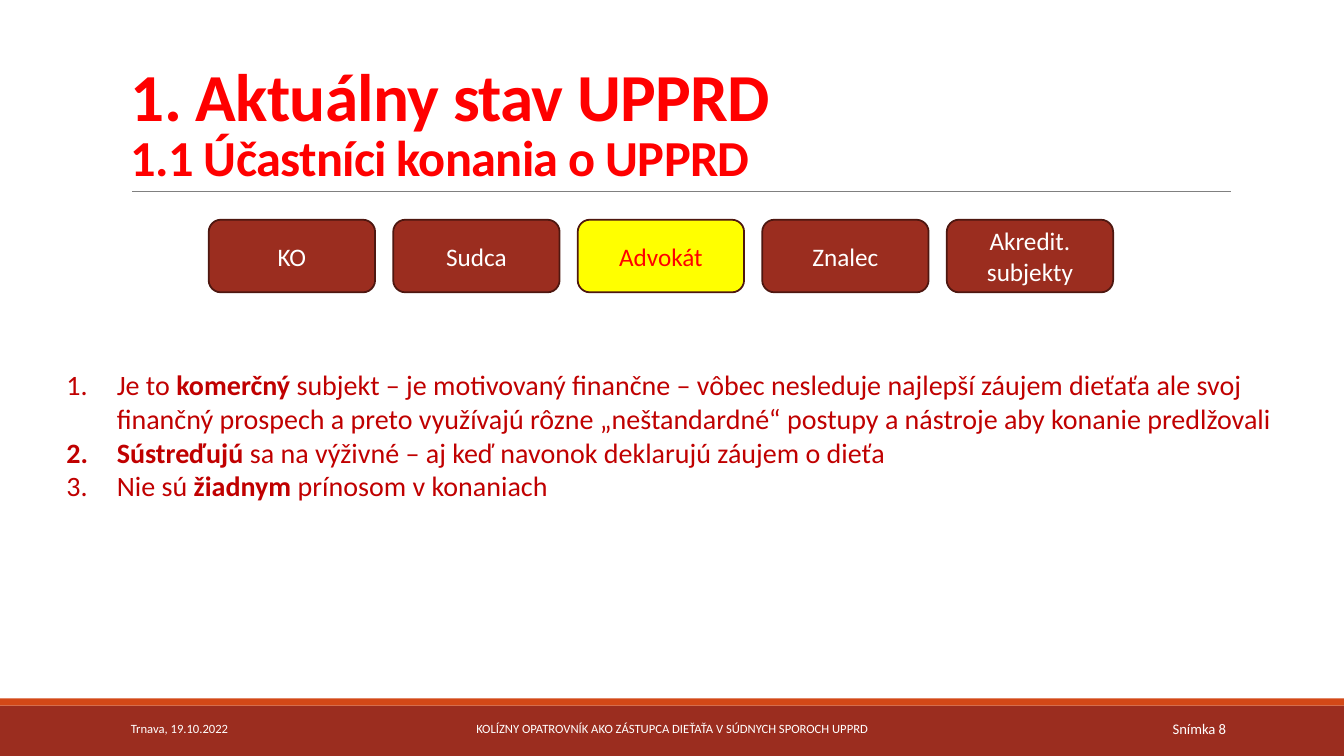
from lxml import etree
from pptx import Presentation
from pptx.dml.color import RGBColor
from pptx.enum.shapes import MSO_CONNECTOR, MSO_SHAPE
from pptx.enum.text import MSO_ANCHOR, PP_ALIGN
from pptx.oxml.ns import qn
from pptx.util import Inches, Pt

RECTANGLE, ROUNDED = MSO_SHAPE.RECTANGLE, MSO_SHAPE.ROUNDED_RECTANGLE
STRAIGHT = MSO_CONNECTOR.STRAIGHT
TOP, MIDDLE, BOTTOM = MSO_ANCHOR.TOP, MSO_ANCHOR.MIDDLE, MSO_ANCHOR.BOTTOM
LEFT, CENTER, RIGHT = PP_ALIGN.LEFT, PP_ALIGN.CENTER, PP_ALIGN.RIGHT

BRICK, ORANGE, DARK = "9B2D1F", "D34817", "4E1710"
WHITE, RED, CRIMSON, YELLOW, GRAY = "FFFFFF", "FF0000", "C00000", "FFFF00", "808080"

TITLE = [[("1. Aktuálny stav UPPRD", {"size": 48}), "\n",
          ("1.1 Účastníci konania o UPPRD", {"size": 36})]]
PARTICIPANTS = ["KO", "Sudca", "Advokát", "Znalec", "Akredit. subjekty"]
HIGHLIGHTED = "Advokát"
BOLD = {"bold": True}
POINTS = [
    ["Je to ", ("komerčný", BOLD),
     " subjekt – je motivovaný finančne – vôbec nesleduje najlepší záujem dieťaťa ale svoj "
     "finančný prospech a preto využívajú rôzne „neštandardné“ postupy a nástroje aby konanie "
     "predlžovali"],
    [("Sústreďujú", BOLD), " sa na výživné – aj keď navonok deklarujú záujem o dieťa"],
    ["Nie sú ", ("žiadnym", BOLD), " prínosom v konaniach"],
]
FOOTERS = [
    ("Trnava, 19.10.2022", 1.2, 2.7, 9, LEFT),
    ("KOLÍZNY OPATROVNÍK AKO ZÁSTUPCA DIEŤAŤA V SÚDNYCH SPOROCH UPPRD", 4.03, 5.27, 9, CENTER),
    ("Snímka 8", 10.83, 1.43, 10.5, RIGHT),
]
BARS = [(7, 0.5, BRICK), (6.93, 0.07, ORANGE)]
SLIDE_WIDTH, SLIDE_HEIGHT = 13.33, 7.5
BOX_LEFT, BOX_TOP, BOX_WIDTH, BOX_HEIGHT, BOX_STEP = 2.07, 2.18, 1.65, 0.72, 1.83


def color(value):
    return RGBColor.from_string(value)


def add_numbering(paragraph):
    properties = paragraph._p.get_or_add_pPr()
    properties.set("marL", str(Inches(0.5)))
    properties.set("indent", str(Inches(-0.5)))
    etree.SubElement(properties, qn("a:buFont"), typeface="+mj-lt")
    etree.SubElement(properties, qn("a:buAutoNum"), type="arabicPeriod")


def write_text(shape, paragraphs, size=18, fill=WHITE, bold=False, align=LEFT, anchor=MIDDLE,
               line_spacing=None, letter_spacing=None, numbered=False):
    frame = shape.text_frame
    frame.word_wrap = True
    frame.vertical_anchor = anchor
    for index, parts in enumerate(paragraphs):
        paragraph = frame.add_paragraph() if index else frame.paragraphs[0]
        paragraph.alignment = align
        if line_spacing:
            paragraph.line_spacing = line_spacing
        if numbered:
            add_numbering(paragraph)
        for part in parts:
            if part == "\n":
                paragraph.add_line_break()
                continue
            text, own = (part, {}) if isinstance(part, str) else part
            run = paragraph.add_run()
            run.text = text
            run.font.name = "Calibri"
            run.font.size = Pt(own.get("size", size))
            run.font.bold = own.get("bold", bold)
            run.font.color.rgb = color(fill)
            if letter_spacing:
                run._r.get_or_add_rPr().set("spc", str(int(letter_spacing * 100)))


def add_text(slide, box, paragraphs, **text_format):
    shape = slide.shapes.add_textbox(*map(Inches, box))
    write_text(shape, paragraphs, **text_format)


def add_block(slide, kind, box, fill, outline=None):
    shape = slide.shapes.add_shape(kind, *map(Inches, box))
    shape.shadow.inherit = False
    shape.fill.solid()
    shape.fill.fore_color.rgb = color(fill)
    if outline:
        shape.line.color.rgb = color(outline)
        shape.line.width = Pt(1.25)
    else:
        shape.line.fill.background()
    return shape


def main():
    presentation = Presentation()
    presentation.slide_width = Inches(SLIDE_WIDTH)
    presentation.slide_height = Inches(SLIDE_HEIGHT)
    slide = presentation.slides.add_slide(presentation.slide_layouts[6])

    for top, height, fill in BARS:
        add_block(slide, RECTANGLE, (0, top, SLIDE_WIDTH, height), fill)

    rule = slide.shapes.add_connector(STRAIGHT, *map(Inches, (1.31, 1.9, 12.21, 1.9)))
    rule.line.color.rgb = color(GRAY)
    rule.line.width = Pt(0.5)
    etree.SubElement(rule._element.spPr, qn("a:effectLst"))

    add_text(slide, (1.2, 0.31, 11, 1.59), TITLE, fill=RED, bold=True, anchor=BOTTOM,
             line_spacing=0.85, letter_spacing=-0.5)

    for index, name in enumerate(PARTICIPANTS):
        fill, text_fill = (YELLOW, RED) if name == HIGHLIGHTED else (BRICK, WHITE)
        box = (BOX_LEFT + index * BOX_STEP, BOX_TOP, BOX_WIDTH, BOX_HEIGHT)
        shape = add_block(slide, ROUNDED, box, fill, outline=DARK)
        write_text(shape, [[name]], fill=text_fill, align=CENTER)

    add_text(slide, (0.56, 3.6, 12.25, 1.45), POINTS, size=20, fill=CRIMSON, anchor=TOP,
             numbered=True)

    for text, left, width, size, align in FOOTERS:
        add_text(slide, (left, 7.03, width, 0.4), [[text]], size=size, align=align)

    presentation.save("out.pptx")


if __name__ == "__main__":
    main()
